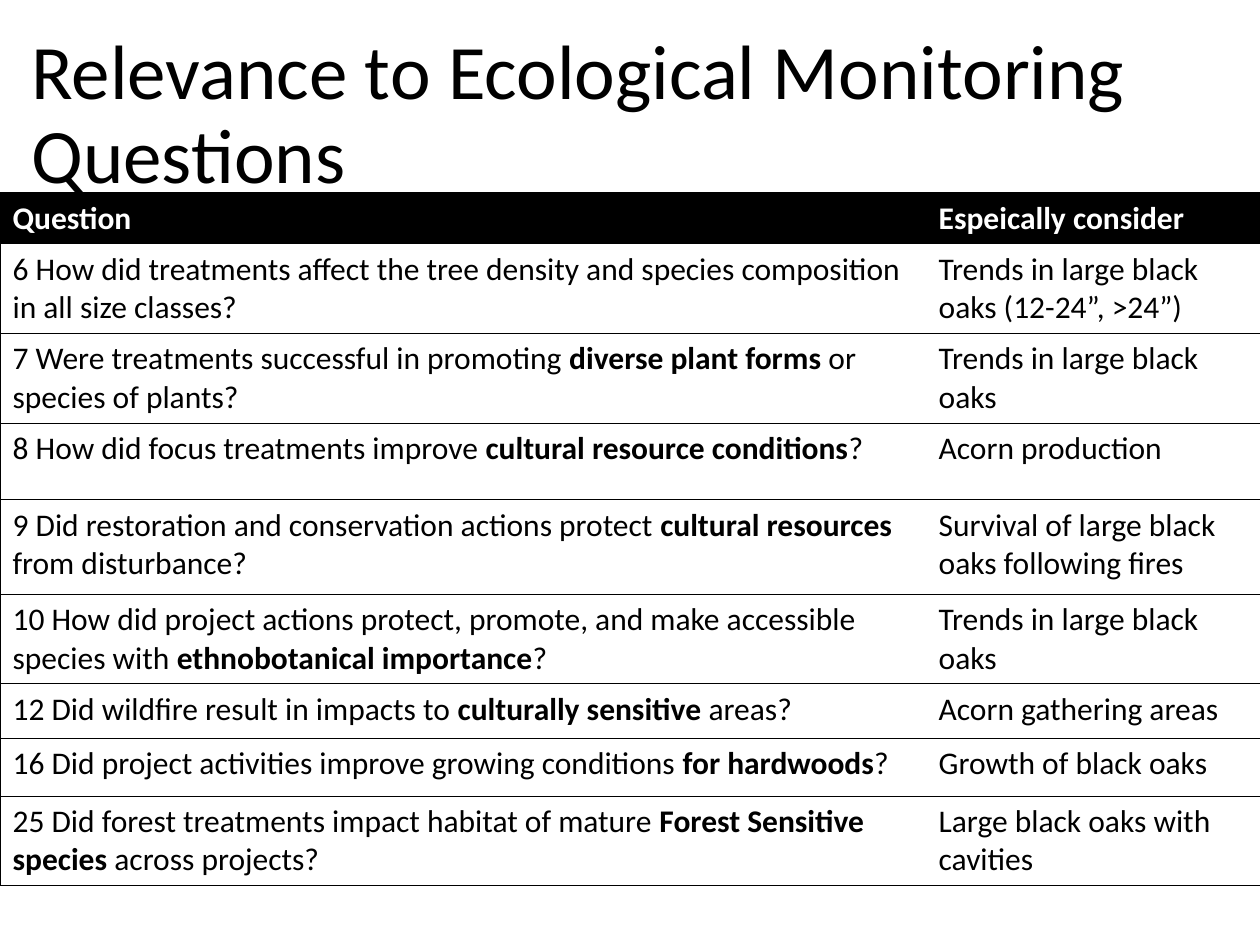
import pptx
import pptx.util
import pptx.dml.color
import pptx.enum.text
import pptx.oxml
import pptx.oxml.ns

Inches = pptx.util.Inches
Pt = pptx.util.Pt
BLACK = pptx.dml.color.RGBColor(0, 0, 0)
WHITE = pptx.dml.color.RGBColor(255, 255, 255)
FONT = "Calibri"


def add_run(para, text, size, color, bold=False):
    run = para.add_run()
    run.text = text
    run.font.name = FONT
    run.font.size = Pt(size)
    run.font.bold = bold
    run.font.color.rgb = color


def add_line(cell, side, shown):
    fill = f'<a:solidFill><a:srgbClr val="{BLACK}"/></a:solidFill>' if shown else "<a:noFill/>"
    cell._tc.get_or_add_tcPr().append(pptx.oxml.parse_xml(
        f'<a:ln{side} {pptx.oxml.ns.nsdecls("a")} w="{Pt(0.5)}">{fill}</a:ln{side}>'))


prs = pptx.Presentation()
prs.slide_width = Inches(10)
prs.slide_height = Inches(7.5)
slide = prs.slides.add_slide(prs.slide_layouts[5])

title = slide.shapes.title
title.left, title.top = Inches(0.15), Inches(0)
title.width, title.height = Inches(9.67), Inches(1.85)
frame = title.text_frame
frame.word_wrap = True
frame.auto_size = pptx.enum.text.MSO_AUTO_SIZE.NONE
frame.vertical_anchor = pptx.enum.text.MSO_ANCHOR.MIDDLE
para = frame.paragraphs[0]
para.alignment = pptx.enum.text.PP_ALIGN.LEFT
para.line_spacing = 0.9
add_run(para, "Relevance to Ecological Monitoring Questions", 44, BLACK)

# Each question alternates plain and bold runs, starting with a plain one.
rows = [
    (0.35, ["", "Question"], ["", "Espeically consider"]),
    (0.61, ["6 How did treatments affect the tree density and species composition in all size classes?"],
     ["Trends in large black oaks (12-24”, >24”)"]),
    (0.61, ["7 Were treatments successful in promoting ", "diverse plant forms", " or species of plants?"],
     ["Trends in large black oaks"]),
    (0.61, ["8 How did focus treatments improve ", "cultural resource conditions", "?"],
     ["Acorn production"]),
    (0.75, ["9 Did restoration and conservation actions protect ", "cultural resources ",
            "from disturbance?"],
     ["Survival of large black oaks following fires"]),
    (0.68, ["10 How did project actions protect, promote, and make accessible species with ",
            "ethnobotanical importance", "?"],
     ["Trends in large black oaks"]),
    (0.43, ["12 Did wildfire result in impacts to ", "culturally sensitive ", "areas?"],
     ["Acorn gathering areas"]),
    (0.46, ["16 Did project activities improve growing conditions ", "for hardwoods", "?"],
     ["Growth of black oaks"]),
    (0.68, ["25 Did forest treatments impact habitat of mature ", "Forest Sensitive species ",
            "across projects?"],
     ["Large black oaks with cavities"]),
]

height = sum(row[0] for row in rows)
table = slide.shapes.add_table(len(rows), 2, Inches(0), Inches(1.53),
                               Inches(10), Inches(height)).table
table.horz_banding = False
table.columns[0].width = Inches(7.35)
table.columns[1].width = Inches(2.65)

for r, (tall, *texts) in enumerate(rows):
    table.rows[r].height = Inches(tall)
    for c, parts in enumerate(texts):
        cell = table.cell(r, c)
        for side, shown in (("L", c == 0), ("R", c == 1), ("T", True), ("B", True)):
            add_line(cell, side, shown)
        cell.fill.solid()
        cell.fill.fore_color.rgb = BLACK if r == 0 else WHITE
        for i, text in enumerate(parts):
            if text:
                add_run(cell.text_frame.paragraphs[0], text, 18,
                        WHITE if r == 0 else BLACK, i % 2 == 1)

prs.save("out.pptx")
